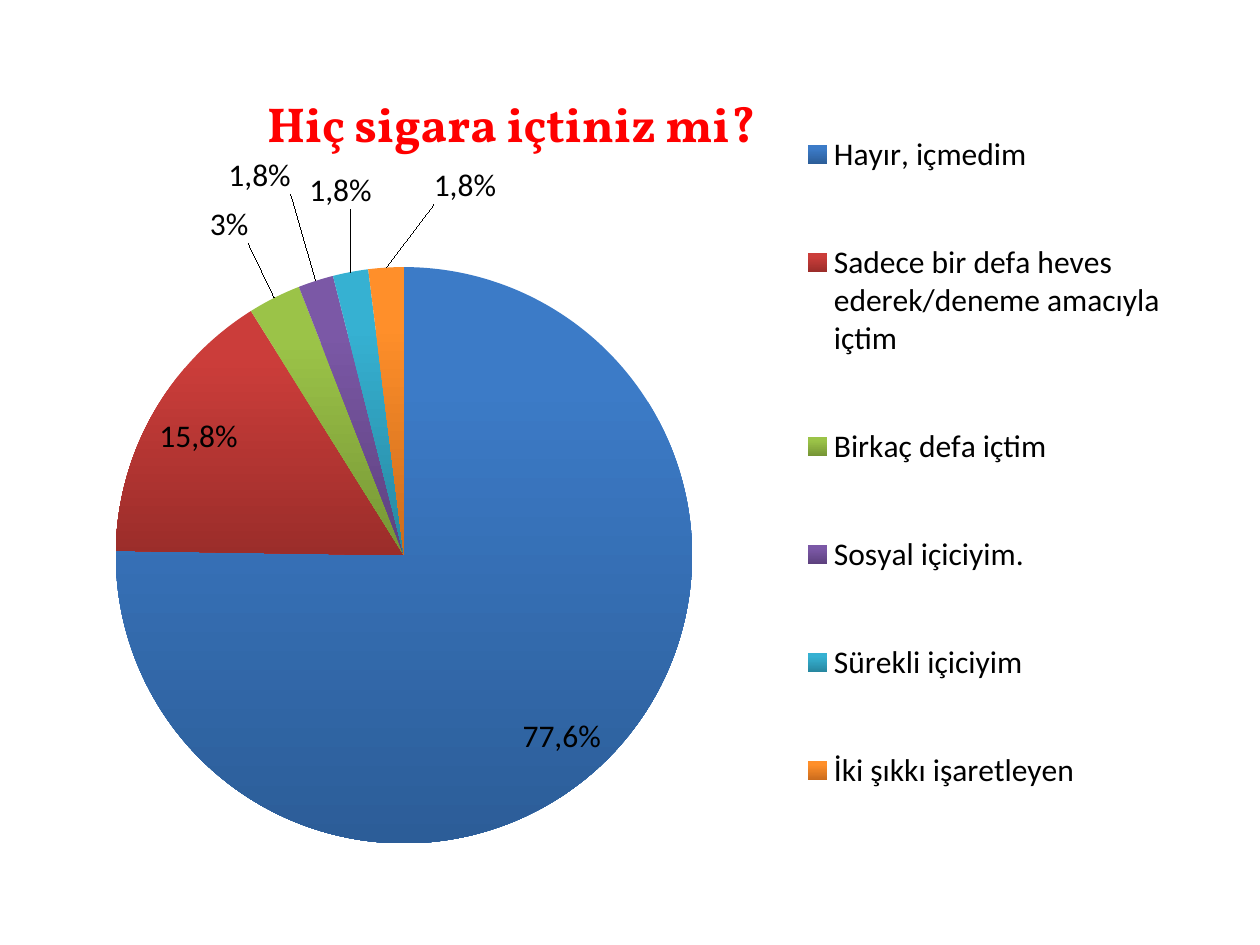
from dataclasses import dataclass

from lxml import etree
from pptx import Presentation
from pptx.chart.data import CategoryChartData
from pptx.dml.color import RGBColor
from pptx.enum.chart import XL_CHART_TYPE, XL_LABEL_POSITION, XL_LEGEND_POSITION
from pptx.oxml.ns import qn
from pptx.util import Inches, Pt

PIE = XL_CHART_TYPE.PIE
LEGEND_RIGHT = XL_LEGEND_POSITION.RIGHT
INSIDE = XL_LABEL_POSITION.INSIDE_END
OUTSIDE = XL_LABEL_POSITION.OUTSIDE_END

QUESTION = "Hiç sigara içtiniz mi?"


@dataclass
class Answer:
    name: str
    value: int
    label: str | None  # None shows the computed percentage
    offset: tuple | None  # label shift as a fraction of the chart
    top: str
    bottom: str


ANSWERS = [
    Answer("Hayır, içmedim", 76, "77,6%", None, "3C7BC7", "2C5D98"),
    Answer("Sadece bir defa heves ederek/deneme amacıyla içtim", 16, "15,8%", None,
           "CB3D3A", "9B2D2A"),
    Answer("Birkaç defa içtim", 3, None, (-0.02, -0.06), "9BC348", "769535"),
    Answer("Sosyal içiciyim.", 2, "1,8%", (-0.02, -0.1), "7B58A6", "5D417E"),
    Answer("Sürekli içiciyim", 2, "1,8%", (0.02, -0.07), "36B1D2", "2787A0"),
    Answer("İki şıkkı işaretleyen", 2, "1,8%", (0.07, -0.07), "FF8F2A", "CB6C1D"),
]


@dataclass
class Theme:
    title_font: str = "Vollkorn"
    body_font: str = "Calibri"
    title_size: int = 28
    body_size: int = 18
    title_color: str = "FF0000"
    body_color: str = "000000"


def set_layout(element, index, **settings):
    """Give a chart part a manual layout, placed as its child at index."""
    for old in element.findall(qn("c:layout")):
        element.remove(old)
    layout = etree.Element(qn("c:layout"))
    manual = etree.SubElement(layout, qn("c:manualLayout"))
    for name, value in settings.items():
        etree.SubElement(manual, qn(f"c:{name}")).set("val", str(value))
    element.insert(index, layout)


class SlideBuilder:
    def __init__(self, slide, theme):
        self.slide = slide
        self.theme = theme

    def style(self, font, title=False):
        theme = self.theme
        font.name = theme.title_font if title else theme.body_font
        font.size = Pt(theme.title_size if title else theme.body_size)
        font.bold = title
        color = theme.title_color if title else theme.body_color
        font.color.rgb = RGBColor.from_string(color)

    def pie(self, title, answers, left, top, width, height):
        data = CategoryChartData()
        data.categories = [answer.name for answer in answers]
        data.add_series(title, [answer.value for answer in answers])
        chart = self.slide.shapes.add_chart(
            PIE, Inches(left), Inches(top), Inches(width), Inches(height), data
        ).chart
        self.style(chart.font)
        self.title(chart, title)
        self.legend(chart)
        set_layout(chart._chartSpace.chart.plotArea, 0, layoutTarget="inner",
                   xMode="edge", yMode="edge", x=0.035, y=0.254, w=0.547, h=0.726)
        plot = chart.plots[0]
        plot.vary_by_categories = True
        series = plot.series[0]
        self.labels(series)
        for point_index, answer in enumerate(answers):
            self.slice(series.points[point_index], answer)
        for label, answer in zip(series._element.iter(qn("c:dLbl")), answers):
            if answer.offset:
                x, y = answer.offset
                set_layout(label, 1, x=x, y=y)
            label.find(qn("c:showVal")).set("val", "0")
            label.find(qn("c:showPercent")).set("val", "1")

    def title(self, chart, text):
        chart.has_title = True
        frame = chart.chart_title.text_frame
        frame.text = text
        self.style(frame.paragraphs[0].font, title=True)
        set_layout(chart.chart_title._element, 1,
                   xMode="edge", yMode="edge", x=0.18, y=0.02)

    def legend(self, chart):
        chart.has_legend = True
        chart.legend.position = LEGEND_RIGHT
        chart.legend.include_in_layout = False
        self.style(chart.legend.font)
        set_layout(chart.legend._element, 1, xMode="edge", yMode="edge",
                   x=0.65, y=0, w=0.34, h=1)

    def labels(self, series):
        labels = series.data_labels
        labels.show_value = False
        labels.show_percentage = True
        labels.number_format = "0%"
        labels.number_format_is_linked = False
        self.style(labels.font)
        leader = labels._element.find(qn("c:showLeaderLines"))
        if leader is None:
            leader = etree.SubElement(labels._element, qn("c:showLeaderLines"))
        leader.set("val", "1")

    def slice(self, point, answer):
        fill = point.format.fill
        fill.gradient()
        fill.gradient_angle = 270
        for stop, color, position in zip(
            fill.gradient_stops, (answer.top, answer.bottom), (0.2, 1)
        ):
            stop.color.rgb = RGBColor.from_string(color)
            stop.position = position
        label = point.data_label
        if answer.label:
            label.text_frame.text = answer.label
            self.style(label.text_frame.paragraphs[0].font)
        else:
            self.style(label.font)
        label.position = OUTSIDE if answer.offset else INSIDE


def main():
    deck = Presentation()
    deck.slide_width, deck.slide_height = Inches(10), Inches(7.5)
    page = SlideBuilder(deck.slides.add_slide(deck.slide_layouts[6]), Theme())
    page.pie(QUESTION, ANSWERS, 0.43, 0.52, 9, 6.3)
    deck.save("out.pptx")


if __name__ == "__main__":
    main()
